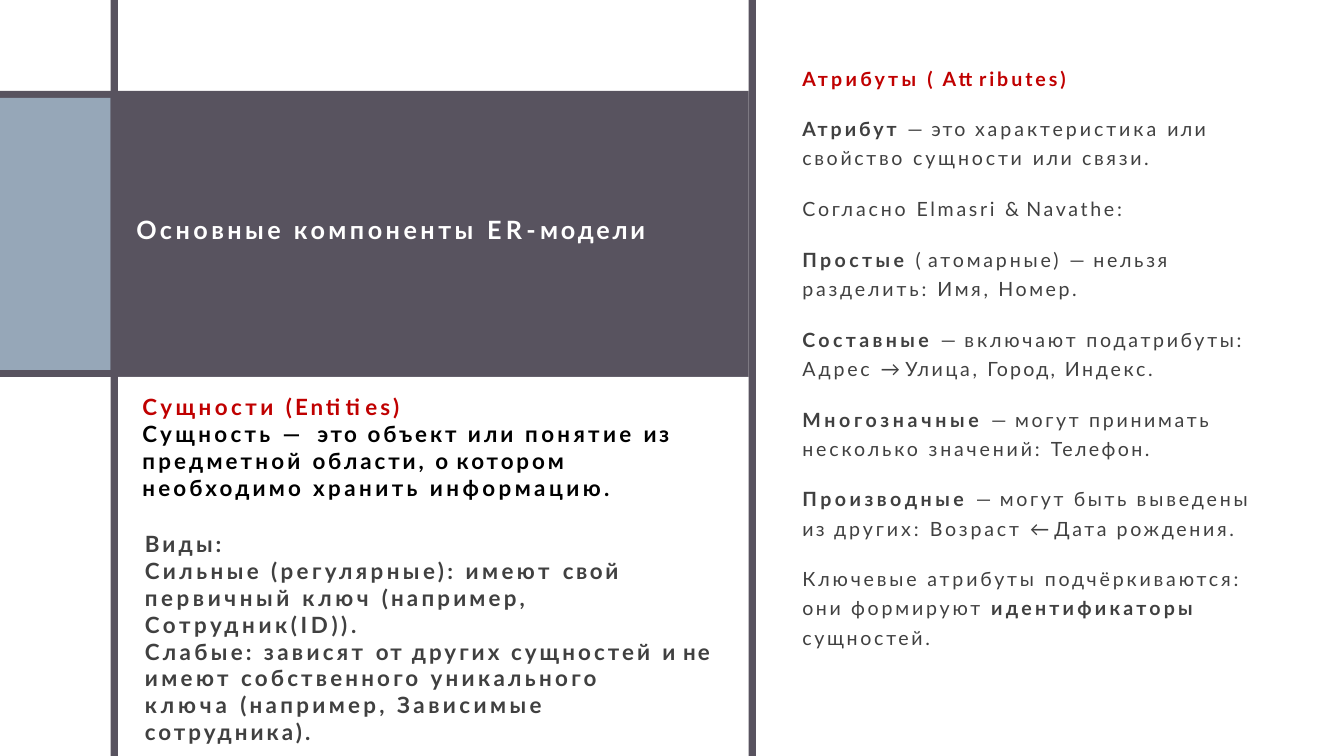
from dataclasses import dataclass

from lxml import etree
from pptx import Presentation
from pptx.dml.color import RGBColor
from pptx.enum.shapes import MSO_SHAPE
from pptx.enum.text import MSO_ANCHOR, MSO_AUTO_SIZE, PP_ALIGN
from pptx.oxml.ns import qn
from pptx.util import Cm, Pt

RECT = MSO_SHAPE.RECTANGLE
TOP = MSO_ANCHOR.TOP
NO_FIT = MSO_AUTO_SIZE.NONE
LEFT = PP_ALIGN.LEFT
BREAK = "\n"


@dataclass(frozen=True)
class Theme:
    font: str = "Lato"
    dark: str = "58535F"
    accent: str = "96A7B8"
    white: str = "FFFFFF"
    red: str = "C00000"
    black: str = "000000"
    text: str = "404040"
    title_size: int = 18
    entity_size: int = 16
    attribute_size: int = 14


THEME = Theme()
WIDTH, HEIGHT = 33.87, 19.05
RAIL = 0.18

TITLE = [("Основные компоненты ", 2.5), ("ER-", 3.1), ("модели", 2)]

ENTITY_HEADING = [("Сущности ", 2.5), ("(Entities)", 2.1)]
ENTITY_DEFINITION = [
    [("Сущность ", 2.4), ("— ", 4.1), ("это ", 1.8), ("объект ", 2.1),
     ("или ", 2.2), ("понятие ", 2.4), ("из ", 1.7), ("предметной ", 2.3),
     ("области, ", 2.1), ("о ", 1.1), ("котором", 2.1)],
    [("необходимо ", 2.3), ("хранить информацию.", 2.5)],
]
ENTITY_KINDS = [
    [("Виды:", 2.3)],
    [("Сильные (регулярные): имеют ", 2.5), ("свой ", 1.9),
     ("первичный ", 2.6), ("ключ ", 2.7), ("(например,", 2.3)],
    [("Сотрудник(ID)).", 2.6)],
    [("Слабые: зависят ", 2.4), ("от ", 1.6), ("других сущностей ", 2.2),
     ("и ", 0.8), ("не ", 1.6), ("имеют ", 2.5), ("собственного ", 2.3),
     ("уникального", 2.4)],
    [("ключа ", 2.8), ("(например, ", 2.4), ("Зависимые ", 2.5),
     (BREAK, 0), ("сотрудника).", 2.2)],
]

ATTRIBUTE_HEADING = [("Атрибуты ", 2.3), ("( ", 1.8), ("Attributes)", 2.1)]
ATTRIBUTE_DEFINITION = [
    ("Атрибут ", 2.1, True), ("— ", 1.2), ("это ", 1.6),
    ("характеристика ", 2.1), ("или ", 1.6), ("свойство ", 1.9),
    ("сущности ", 2), ("или ", 1.8), ("связи.", 1.9)]
ATTRIBUTE_SOURCE = [("Согласно ", 2), ("Elmasri ", 1.9), ("& ", 0.8),
                    ("Navathe:", 1.9)]
ATTRIBUTE_KINDS = [
    (9.7, [[("Простые ", 2.4, True), ("( ", 0.8), ("атомарные) ", 2),
            ("— ", 1.2), ("нельзя ", 1.9), ("разделить: ", 2),
            ("Имя, ", 1.9), ("Номер.", 1.8)]]),
    (11.63, [[("Составные ", 2.4, True), ("— ", 1.2), ("включают ", 2),
              ("податрибуты: ", 1.9), ("Адрес ", 2), ("→ ", 0),
              ("Улица, ", 1.9), ("Город, ", 1.6), ("Индекс.", 1.9)]]),
    (10.69, [[("Многозначные ", 2.6, True), ("— ", 1.2),
              ("могут принимать ", 1.9), ("несколько значений: ", 2),
              ("Телефон.", 1.7)]]),
    (11.73, [[("Производные ", 2.5, True), ("— ", 1.2), ("могут ", 1.9),
              ("быть ", 1.8), ("выведены", 2)],
             [("из ", 1.6), ("других: ", 2.1), ("Возраст ", 2), ("← ", 0),
              ("Дата ", 1.8), ("рождения.", 1.9)]]),
    (11.35, [[("Ключевые атрибуты подчёркиваются: ", 2), ("они ", 1.8),
              ("формируют ", 2), ("идентификаторы", 2.3, True)],
             [("сущностей.", 1.9)]]),
]


def add_runs(p, runs, size, color, bold=False):
    for text, spacing, *strong in runs:
        if text == BREAK:
            p.add_line_break()
            continue
        r = p.add_run()
        r.text = text
        fmt = {"name": THEME.font, "size": Pt(size), "bold": bold or bool(strong)}
        for key, value in fmt.items():
            setattr(r.font, key, value)
        r.font.color.rgb = RGBColor.from_string(color)
        r.font._element.set("spc", str(round(spacing * 100)))


def add_text(s, box, paragraphs, line_spacing=1.0):
    sp = s.shapes.add_textbox(*map(Cm, box))
    tf = sp.text_frame
    fmt = {"word_wrap": True, "auto_size": NO_FIT, "vertical_anchor": TOP,
           "margin_left": Cm(0.03), "margin_top": Cm(0.03),
           "margin_right": 0, "margin_bottom": 0}
    for key, value in fmt.items():
        setattr(tf, key, value)
    for i, (runs, size, color, bold) in enumerate(paragraphs):
        p = tf.add_paragraph() if i else tf.paragraphs[0]
        p.line_spacing = line_spacing
        add_runs(p, runs, size, color, bold)


def add_block(s, box, color, alpha=None):
    sp = s.shapes.add_shape(RECT, *map(Cm, box))
    sp.shadow.inherit = False
    sp.line.fill.background()
    sp.fill.solid()
    sp.fill.fore_color.rgb = RGBColor.from_string(color)
    if alpha:
        rgb = sp._element.spPr.find(".//" + qn("a:srgbClr"))
        etree.SubElement(rgb, qn("a:alpha")).set("val", str(alpha * 1000))


def draw_frame(s, x, y, w, h):
    rail_x, band_y, band_h = x + 2.79, y + 2.29, 7.21
    panel_x, panel_y, edge_x = rail_x + RAIL, band_y + band_h, x + w - RAIL
    add_block(s, (x, band_y, edge_x - x, band_h), THEME.dark)
    add_block(s, (x, band_y + RAIL, rail_x - x, band_h - 2 * RAIL), THEME.accent)
    add_block(s, (panel_x, panel_y, edge_x - panel_x, y + h - panel_y),
              THEME.white, 75)
    for left in (rail_x, edge_x):
        add_block(s, (left, y, RAIL, h), THEME.dark)


def draw_title(s, x, y, w, h):
    sp = s.shapes.title
    s.shapes._spTree.append(sp._element)
    box = {"left": x, "top": y, "width": w, "height": h}
    for key, value in box.items():
        setattr(sp, key, Cm(value))
    tf = sp.text_frame
    fmt = {"word_wrap": True, "auto_size": NO_FIT, "vertical_anchor": TOP}
    for key, value in fmt.items():
        setattr(tf, key, value)
    p = tf.paragraphs[0]
    p.alignment = LEFT
    add_runs(p, TITLE, THEME.title_size, THEME.white, True)


def draw_entities(s, x, y, w, h):
    size = THEME.entity_size
    definition = [(ENTITY_HEADING, size, THEME.red, True)]
    definition += [(runs, size, THEME.black, True) for runs in ENTITY_DEFINITION]
    kinds = [(runs, size, THEME.text, True) for runs in ENTITY_KINDS]
    kinds_y = 3.45
    add_text(s, (x, y, 14.17, 2.77), definition)
    add_text(s, (x + 0.06, y + kinds_y, w - 0.06, h - kinds_y), kinds)


def draw_attributes(s, x, y, w):
    size = THEME.attribute_size
    add_text(s, (x, y, 7.01, 0.64), [(ATTRIBUTE_HEADING, size, THEME.red, True)])
    add_text(s, (x, y + 1.12, 10.69, 1.55),
             [(ATTRIBUTE_DEFINITION, size, THEME.text, False)], 1.25)
    add_text(s, (x, y + 3.28, 8.56, 0.66),
             [(ATTRIBUTE_SOURCE, size, THEME.text, False)])
    for i, (width, lines) in enumerate(ATTRIBUTE_KINDS):
        add_text(s, (x, y + 4.42 + 2.01 * i, min(width, w), 1.55),
                 [(runs, size, THEME.text, False) for runs in lines], 1.25)


def main():
    prs = Presentation()
    prs.slide_width, prs.slide_height = Cm(WIDTH), Cm(HEIGHT)
    s = prs.slides.add_slide(prs.slide_layouts[5])
    draw_frame(s, 0, 0, 19.05, HEIGHT)
    draw_attributes(s, 20.19, 1.65, 12)
    draw_entities(s, 3.56, 9.88, 15.3, 8.97)
    draw_title(s, 3.18, 5.28, 15.5, 1.02)
    prs.save("out.pptx")


if __name__ == "__main__":
    main()
